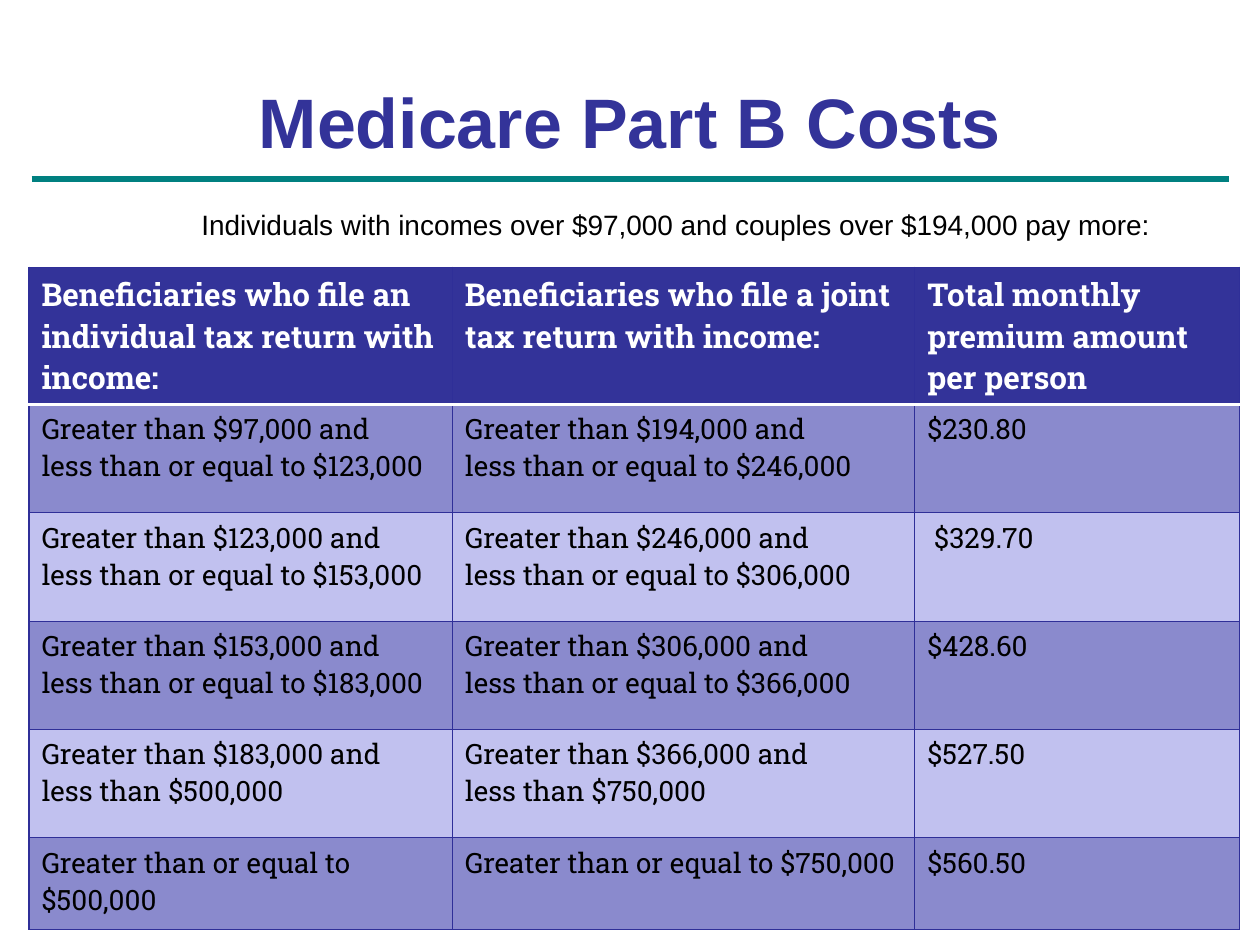
"""Build the Medicare Part B costs slide."""
from lxml import etree
from pptx import Presentation
from pptx.dml.color import RGBColor
from pptx.enum.shapes import MSO_CONNECTOR
from pptx.enum.text import MSO_ANCHOR, PP_ALIGN
from pptx.oxml.ns import qn
from pptx.util import Inches, Pt

STRAIGHT = MSO_CONNECTOR.STRAIGHT
MIDDLE, TOP = MSO_ANCHOR.MIDDLE, MSO_ANCHOR.TOP
CENTER, LEFT = PP_ALIGN.CENTER, PP_ALIGN.LEFT

NAVY = RGBColor(0x33, 0x33, 0x99)
TEAL = RGBColor(0x00, 0x80, 0x80)
WHITE = RGBColor(0xFF, 0xFF, 0xFF)
BLACK = RGBColor(0x00, 0x00, 0x00)
BORDER = RGBColor(0x2F, 0x2F, 0x98)
DARK_BAND = RGBColor(0x8A, 0x8A, 0xCD)
LIGHT_BAND = RGBColor(0xC1, 0xC1, 0xEF)

COLUMN_WIDTHS = [3.36, 3.67, 2.58]
ROW_HEIGHTS = [1.09, 0.86, 0.86, 0.86, 0.86, 0.73]
PREMIUM_ROWS = [
    ["Beneficiaries who file an\nindividual tax return with income:",
     "Beneficiaries who file a joint tax return with income:",
     "Total monthly premium amount per person"],
    ["Greater than $97,000 and\nless than or equal to $123,000",
     "Greater than $194,000 and\nless than or equal to $246,000", "$230.80"],
    ["Greater than $123,000 and\nless than or equal to $153,000",
     "Greater than $246,000 and\nless than or equal to $306,000", " $329.70"],
    ["Greater than $153,000 and\nless than or equal to $183,000",
     "Greater than $306,000 and\nless than or equal to $366,000", "$428.60"],
    ["Greater than $183,000 and\nless than $500,000",
     "Greater than $366,000 and\nless than $750,000", "$527.50"],
    ["Greater than or equal to $500,000",
     "Greater than or equal to $750,000", "$560.50"],
]


def set_text(tf, text, font, size, color, bold=False, align=LEFT):
    """Fill a text frame and format all its runs alike."""
    tf.text = text
    for p in tf.paragraphs:
        p.alignment = align
        for r in p.runs:
            r.font.name = font
            r.font.size = Pt(size)
            r.font.bold = bold
            r.font.color.rgb = color


def add_text(s, left, top, width, height, text, size, color, bold=False,
             align=LEFT, anchor=TOP):
    """Add a wrapping Arial text box."""
    box = s.shapes.add_textbox(Inches(left), Inches(top), Inches(width), Inches(height))
    tf = box.text_frame
    tf.word_wrap = True
    tf.vertical_anchor = anchor
    set_text(tf, text, "Arial", size, color, bold, align)


def add_rule(s, left, right, y):
    """Add the horizontal rule under the title."""
    rule = s.shapes.add_connector(STRAIGHT, Inches(left), Inches(y), Inches(right), Inches(y))
    rule.line.color.rgb = TEAL
    rule.line.width = Pt(3)
    etree.SubElement(rule._element.spPr, qn("a:effectLst"))


def set_border(cell, side, color, width):
    """Draw one side of a cell."""
    ln = etree.SubElement(cell._tc.get_or_add_tcPr(), qn(f"a:ln{side}"), w=str(Pt(width)))
    fill = etree.SubElement(ln, qn("a:solidFill"))
    etree.SubElement(fill, qn("a:srgbClr"), val=str(color))


def style_cell(cell, text, row):
    """Set the borders, fill and text of a premium table cell."""
    header = row == 0
    heavy_side = {0: "B", 1: "T"}.get(row)
    for side in "LRTB":
        if side == heavy_side:
            set_border(cell, side, WHITE, 2)
        else:
            set_border(cell, side, BORDER, 0.75)
    cell.fill.solid()
    cell.fill.fore_color.rgb = NAVY if header else DARK_BAND if row % 2 else LIGHT_BAND
    set_text(cell.text_frame, text, "Roboto Slab", 18 if header else 16,
             WHITE if header else BLACK, header)


def add_premium_table(s, left, top):
    """Add the table of premiums by income."""
    frame = s.shapes.add_table(len(ROW_HEIGHTS), len(COLUMN_WIDTHS), Inches(left), Inches(top),
                               Inches(sum(COLUMN_WIDTHS)), Inches(sum(ROW_HEIGHTS)))
    table = frame.table
    for column, width in zip(table.columns, COLUMN_WIDTHS):
        column.width = Inches(width)
    for row, height in zip(table.rows, ROW_HEIGHTS):
        row.height = Inches(height)
    for i, texts in enumerate(PREMIUM_ROWS):
        for j, text in enumerate(texts):
            style_cell(table.cell(i, j), text, i)


def main():
    """Build and save the slide."""
    prs = Presentation()
    prs.slide_width, prs.slide_height = Inches(10), Inches(7.5)
    s = prs.slides.add_slide(prs.slide_layouts[6])
    add_text(s, 0.5, 0.33, 9, 1.25, "Medicare Part B Costs", 40, NAVY, True, CENTER, MIDDLE)
    add_text(s, 1.5, 1.6, 8, 0.4,
             "Individuals with incomes over $97,000 and couples over $194,000 pay more:",
             16, BLACK)
    add_rule(s, 0.25, 9.75, 1.42)
    add_premium_table(s, 0.23, 2.12)
    prs.save("out.pptx")


if __name__ == "__main__":
    main()
